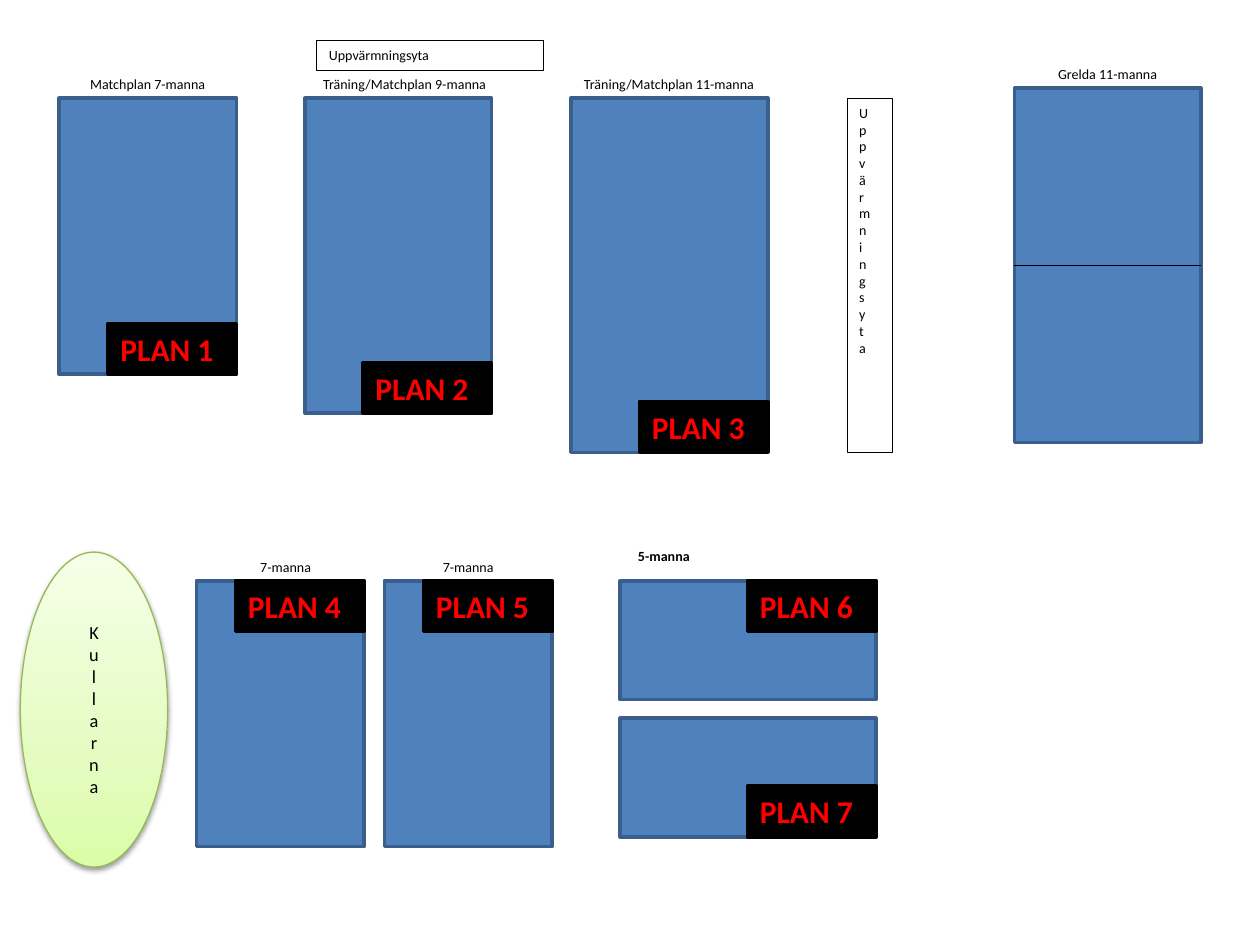
from typing import NamedTuple, Optional

from lxml.etree import SubElement
from pptx import Presentation
from pptx.dml.color import RGBColor
from pptx.enum.shapes import MSO_CONNECTOR as Connector, MSO_SHAPE as Preset
from pptx.enum.text import MSO_ANCHOR as Anchor, PP_ALIGN as Align
from pptx.oxml.ns import qn
from pptx.util import Cm, Pt

BLUE = RGBColor(0x4F, 0x81, 0xBD)
DARK_BLUE = RGBColor(0x3A, 0x5F, 0x8C)
BLACK = RGBColor(0x00, 0x00, 0x00)
RED = RGBColor(0xFF, 0x00, 0x00)
GREEN = RGBColor(0x98, 0xB9, 0x55)
GREEN_STOPS = ((0, "DAFDA7"), (35, "E4FCC2"), (100, "F5FFE7"))
FONT = "Calibri"
TAG_WIDTH, TAG_HEIGHT = 2.59, 1.02
CAPTION_HEIGHT = 0.6


class Box(NamedTuple):
    left: float
    top: float
    width: float
    height: float


class Field(NamedTuple):
    box: Box
    tag: Optional[str] = None
    tag_on_top: bool = False


class Caption(NamedTuple):
    text: str
    left: float
    top: float
    width: float
    bold: bool = False


class WarmUp(NamedTuple):
    box: Box
    stacked: bool = False


GUEST_FIELD = Field(Box(20.45, 1.78, 3.76, 7.14))
FIELDS = (
    Field(Box(12.5, 14.48, 5.16, 2.39), "PLAN 7"),
    Field(Box(12.5, 11.71, 5.16, 2.39), "PLAN 6", True),
    Field(Box(1.19, 1.98, 3.58, 5.56), "PLAN 1"),
    Field(Box(6.15, 1.98, 3.76, 6.35), "PLAN 2"),
    Field(Box(11.51, 1.98, 3.97, 7.14), "PLAN 3"),
    Field(Box(3.96, 11.71, 3.38, 5.36), "PLAN 4", True),
    Field(Box(7.75, 11.71, 3.38, 5.36), "PLAN 5", True),
)
CAPTIONS = (
    Caption("Matchplan 7-manna", 1.19, 1.4, 3.58),
    Caption("Träning/Matchplan 9-manna", 5.77, 1.4, 4.78),
    Caption("5-manna", 11.3, 10.92, 4.17, True),
    Caption("7-manna", 4.17, 11.13, 3.18),
    Caption("7-manna", 7.75, 11.13, 3.38),
    Caption("Grelda 11-manna", 20.45, 1.19, 3.76),
    Caption("Träning/Matchplan 11-manna", 11.1, 1.4, 4.78),
)
WARM_UPS = (
    WarmUp(Box(17.07, 1.98, 0.91, 7.14), True),
    WarmUp(Box(6.38, 0.81, 4.57, 0.6)),
)
HILLS = Box(0.41, 11.13, 2.97, 6.35)


def add_outline(slide, preset, box: Box, fill, line, weight: float):
    """Add a preset shape with its fill and line."""
    shape = slide.shapes.add_shape(preset, *map(Cm, box))
    shape.shadow.inherit = False
    if fill is None:
        shape.fill.background()
    else:
        shape.fill.solid()
        shape.fill.fore_color.rgb = fill
    shape.line.color.rgb = line
    shape.line.width = Pt(weight)
    return shape


def write(shape, text: str, size: float, color=BLACK, bold=False,
          align=Align.LEFT, anchor=Anchor.TOP, stacked=False) -> None:
    """Write one formatted paragraph into a shape."""
    frame = shape.text_frame
    frame.text = text
    frame.word_wrap = True
    frame.vertical_anchor = anchor
    if stacked:
        frame._txBody.bodyPr.set("vert", "wordArtVert")
    paragraph = frame.paragraphs[0]
    paragraph.alignment = align
    font = paragraph.runs[0].font
    font.name, font.size, font.bold = FONT, Pt(size), bold
    font.color.rgb = color


def add_field(slide, field: Field):
    """Draw one playing field."""
    return add_outline(slide, Preset.RECTANGLE, field.box, BLUE, DARK_BLUE, 2)


def add_tag(slide, field: Field) -> None:
    """Draw the plan tag in the right-hand corner of its field."""
    left, top, width, height = field.box
    tag_top = top if field.tag_on_top else top + height - TAG_HEIGHT
    box = Box(left + width - TAG_WIDTH, tag_top, TAG_WIDTH, TAG_HEIGHT)
    tag = add_outline(slide, Preset.RECTANGLE, box, BLACK, BLACK, 2)
    write(tag, field.tag, 18, RED, bold=True)


def add_caption(slide, caption: Caption) -> None:
    """Place a centred caption above a field."""
    box = Box(caption.left, caption.top, caption.width, CAPTION_HEIGHT)
    label = slide.shapes.add_textbox(*map(Cm, box))
    write(label, caption.text, 8, bold=caption.bold, align=Align.CENTER)


def add_warm_up(slide, area: WarmUp) -> None:
    """Draw an outlined warm-up area."""
    shape = add_outline(slide, Preset.RECTANGLE, area.box, None, BLACK, 0.25)
    write(shape, "Uppvärmningsyta", 8, stacked=area.stacked)


def add_halfway_line(slide, field) -> None:
    """Join the middles of a field's left and right sides."""
    halfway = slide.shapes.add_connector(Connector.STRAIGHT, 0, 0, 0, 0)
    halfway.begin_connect(field, 1)
    halfway.end_connect(field, 3)
    halfway.line.color.rgb = BLACK
    halfway.line.width = Pt(0.75)
    SubElement(halfway._element.spPr, qn("a:effectLst"))


def add_hills(slide) -> None:
    """Draw the green hills with gradient and soft shadow."""
    hills = add_outline(slide, Preset.OVAL, HILLS, GREEN, GREEN, 0.75)
    hills.fill.gradient()
    hills.fill.gradient_angle = 90
    properties = hills._element.spPr
    stops = properties.find(".//" + qn("a:gsLst"))
    for stop in list(stops):
        stops.remove(stop)
    for percent, color in GREEN_STOPS:
        stop = SubElement(stops, qn("a:gs"), pos=str(percent * 1000))
        SubElement(stop, qn("a:srgbClr"), val=color)
    shadow = SubElement(properties.find(qn("a:effectLst")), qn("a:outerShdw"),
                        blurRad=str(Pt(3.1)), dist=str(Pt(1.6)),
                        dir="5400000", rotWithShape="0")
    shade = SubElement(shadow, qn("a:srgbClr"), val=str(BLACK))
    SubElement(shade, qn("a:alpha"), val="38000")
    write(hills, "Kullarna", 10.5, align=Align.CENTER,
          anchor=Anchor.MIDDLE, stacked=True)


def main() -> None:
    """Build the field map and save it."""
    deck = Presentation()
    deck.slide_width, deck.slide_height = Cm(25.4), Cm(19.05)
    slide = deck.slides.add_slide(deck.slide_layouts[6])
    for field in FIELDS:
        add_field(slide, field)
    add_halfway_line(slide, add_field(slide, GUEST_FIELD))
    for caption in CAPTIONS:
        add_caption(slide, caption)
    for area in WARM_UPS:
        add_warm_up(slide, area)
    for field in sorted(FIELDS, key=lambda field: field.tag):
        add_tag(slide, field)
    add_hills(slide)
    deck.save("out.pptx")


if __name__ == "__main__":
    main()
